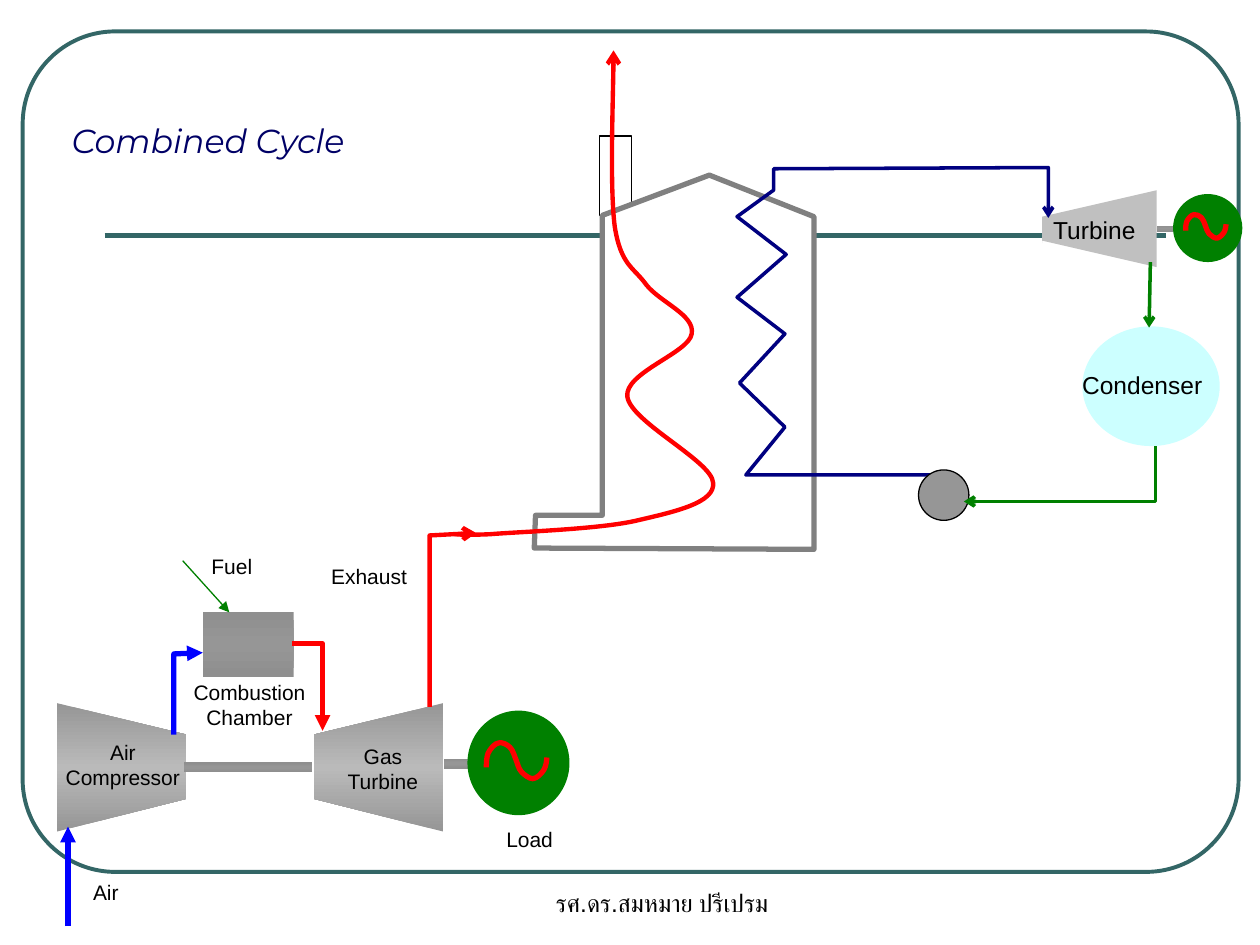
from copy import deepcopy
from pptx import Presentation
from pptx.dml.color import RGBColor
from pptx.enum.shapes import MSO_CONNECTOR as Connector, MSO_SHAPE as Shape
from pptx.enum.text import MSO_ANCHOR as Anchor, PP_ALIGN as Align
from pptx.oxml.ns import qn
from pptx.oxml.xmlchemy import OxmlElement
from pptx.util import Inches, Pt

THEME = {
    "font": "Arial", "title font": "Montserrat",
    "title": 19, "large": 14, "small": 12,
    "text": "000000", "heading": "000066", "white": "FFFFFF", "frame": "336666",
    "wall": "808080", "silver": "C0C0C0", "pump": "969696", "ice": "CCFFFF",
    "green": "008000", "red": "FF0000", "blue": "0000FF", "navy": "000080",
    "metal": ("8F8F8F", "969696"), "casing": ("969696", "BABABA"),
}

# Content, in inches. Boxes are left, top, width, height.
FRAME = (0.18, 0.25, 9.65, 6.67)
RULE = ((0.83, 1.87), (9.25, 1.87))
STACK = (4.76, 1.08, 0.25, 0.63)

# points, fill, line colour, line width
BODIES = [
    ([(4.24, 4.35), (4.25, 4.09), (4.78, 4.09), (4.78, 1.71), (5.63, 1.39),
      (6.46, 1.72), (6.46, 4.36)], "white", "wall", 3),  # boiler
    ([(8.27, 1.93), (8.27, 1.72), (9.18, 1.51), (9.18, 2.12), (8.27, 1.91)],
     "silver", None, 0),  # steam turbine
    ([(0.45, 5.58), (1.48, 5.83), (1.48, 6.34), (0.45, 6.6)],
     "casing", None, 0),  # air compressor
    ([(3.52, 5.58), (2.49, 5.83), (2.49, 6.34), (3.52, 6.6)],
     "casing", None, 0),  # gas turbine
]
METAL_PARTS = [
    (9.18, 1.79, 0.14, 0.05), (1.46, 6.05, 1.02, 0.08),
    (3.52, 6.02, 0.21, 0.08),  # shafts
    (1.61, 4.86, 0.72, 0.51),  # combustion chamber
]
STEAM = [(7.54, 3.77), (5.92, 3.77), (6.23, 3.39), (5.87, 3.04), (6.23, 2.65),
         (5.85, 2.36), (6.24, 2.02), (5.85, 1.72), (6.14, 1.51), (6.14, 1.34),
         (8.32, 1.33), (8.32, 1.73)]
# box, fill, line colour
DISCS = [
    ((7.29, 3.73, 0.4, 0.4), "pump", "text"),
    ((8.59, 2.59, 1.09, 0.95), "ice", None),
    ((9.31, 1.54, 0.55, 0.54), "green", None),
    ((3.71, 5.64, 0.81, 0.83), "green", None),
]
# points, colour, width, arrowhead
PIPES = [
    ([(9.17, 3.54), (9.17, 3.98), (7.65, 3.98)], "green", 2, "arrow"),
    ([(1.38, 5.83), (1.38, 5.19), (1.61, 5.18)], "blue", 3, "triangle"),
    ([(2.32, 5.11), (2.56, 5.11), (2.56, 5.8)], "red", 3, "triangle"),
    ([(3.41, 5.61), (3.41, 4.25), (3.78, 4.23)], "red", 2.5, "arrow"),
]
# start, end, colour, width, arrowhead
ARROWS = [
    ((9.13, 2.08), (9.12, 2.6), "green", 2, "arrow"),
    ((0.54, 7.35), (0.54, 6.56), "blue", 3, "triangle"),
    ((1.45, 4.45), (1.82, 4.86), "green", 0.75, "triangle"),
]
# Bezier points: a start, then two handles and an end for each curve
FLUE_GAS = [
    (3.61, 4.24), (3.65, 4.24), (3.65, 4.25), (3.89, 4.24), (4.13, 4.22),
    (4.77, 4.2), (5.06, 4.13), (5.36, 4.06), (5.68, 3.99), (5.66, 3.83),
    (5.65, 3.66), (5.01, 3.35), (4.98, 3.15), (4.95, 2.96), (5.47, 2.8),
    (5.49, 2.65), (5.52, 2.5), (5.24, 2.4), (5.13, 2.26), (5.03, 2.12),
    (4.93, 2.11), (4.88, 1.8), (4.84, 1.49), (4.87, 0.69), (4.87, 0.4)]
# The generator wave, as shares of its box
WAVE = [
    (0, 0.69), (0, 0.6), (0, 0.42), (0.03, 0.3), (0.07, 0.17), (0.14, 0.03),
    (0.21, 0.02), (0.27, 0), (0.34, 0.06), (0.39, 0.14), (0.44, 0.22),
    (0.46, 0.36), (0.49, 0.48), (0.52, 0.6), (0.53, 0.72), (0.58, 0.81),
    (0.63, 0.9), (0.71, 1), (0.77, 1), (0.84, 0.99), (0.91, 0.86),
    (0.95, 0.76), (0.99, 0.66), (1, 0.48), (1, 0.42)]
WAVE_BOXES = [(9.41, 1.7, 0.32, 0.19), (3.86, 5.89, 0.48, 0.29)]

# text, box, size, alignment, top inset
LABELS = [
    ("รศ.ดร.สมหมาย ปรีเปรม", (3.67, 7, 3.17, 0.5), "large", Align.CENTER, 0.05),
    ("Turbine", (8.26, 1.66, 0.98, 0.28), "large", Align.LEFT, 0.05),
    ("Condenser", (8.49, 2.89, 1.33, 0.56), "large", Align.LEFT, 0.05),
    ("Fuel", (1.58, 4.34, 0.83, 0.35), "small", Align.LEFT, 0.05),
    ("Load", (3.92, 6.51, 0.83, 0.35), "small", Align.LEFT, 0.05),
    ("Exhaust", (2.53, 4.42, 0.83, 0.35), "small", Align.LEFT, 0.05),
    ("Air", (0.64, 6.93, 0.83, 0.35), "small", Align.LEFT, 0.05),
    ("Air Compressor", (0.38, 5.82, 1.19, 0.56), "small", Align.CENTER, 0.05),
    ("Gas Turbine", (2.56, 5.85, 0.96, 0.52), "small", Align.CENTER, 0.05),
    ("Combustion Chamber", (1.42, 5.39, 1.12, 0.56), "small", Align.CENTER, 0),
]
TITLE = ("Combined Cycle", (0.47, 0.54, 3.32, 1.14), "title", Align.LEFT, 0.05)

deck = Presentation()
deck.slide_width, deck.slide_height = Inches(10), Inches(7.5)
page = deck.slides.add_slide(deck.slide_layouts[6])


def color(name):
    return RGBColor.from_string(THEME.get(name, name))


def set_line(item, name, width=0.75, head=None):
    if name is None:
        item.line.fill.background()
        return
    item.line.color.rgb = color(name)
    item.line.width = Pt(width)
    if head:
        tail = OxmlElement("a:tailEnd")
        tail.set("type", head)
        item.line._get_or_add_ln().append(tail)


def set_fill(shape, name):
    shape.shadow.inherit = False
    if name is None:
        shape.fill.background()
    elif isinstance(THEME[name], tuple):  # edge, middle, edge
        shape.fill.gradient()
        shape.fill.gradient_angle = 90
        edge, middle = shape.fill.gradient_stops
        edge.color.rgb, middle.color.rgb = map(color, THEME[name])
        edge.position, middle.position = 0, 0.5
        stops = next(shape._element.iter(qn("a:gsLst")))
        last = deepcopy(stops[0])
        last.set("pos", "100000")
        stops.append(last)
    else:
        shape.fill.solid()
        shape.fill.fore_color.rgb = color(name)


def add_preset(kind, box, fill, line=None, width=0.75):
    shape = page.shapes.add_shape(kind, *map(Inches, box))
    set_fill(shape, fill)
    set_line(shape, line, width)
    return shape


def add_outline(points, fill, line, width, head=None, curved=False):
    first, *rest = [(Inches(x), Inches(y)) for x, y in points]
    builder = page.shapes.build_freeform(*first)
    builder.add_line_segments(rest, close=fill is not None)
    shape = builder.convert_to_shape()
    set_fill(shape, fill)
    set_line(shape, line, width, head)
    if curved:  # every three points become one Bezier segment
        steps = list(shape._element.iter(qn("a:lnTo")))
        for i in range(0, len(steps), 3):
            curve = OxmlElement("a:cubicBezTo")
            steps[i].addprevious(curve)
            for step in steps[i:i + 3]:
                curve.append(step[0])
                step.getparent().remove(step)


def add_line(start, end, name, width, head=None):
    line = page.shapes.add_connector(Connector.STRAIGHT, *map(Inches, start + end))
    set_line(line, name, width, head)
    line._element.spPr.append(OxmlElement("a:effectLst"))


def add_label(text, box, size, align, inset, font="font", ink="text"):
    label = page.shapes.add_textbox(*map(Inches, box))
    frame = label.text_frame
    frame.word_wrap = True
    frame.margin_top = frame.margin_bottom = Inches(inset)
    frame.text = text
    para = frame.paragraphs[0]
    para.alignment = align
    span = para.runs[0].font
    span.name, span.size = THEME[font], Pt(THEME[size])
    span.color.rgb = color(ink)
    return label


# Frame and rule
add_preset(Shape.ROUNDED_RECTANGLE, FRAME, None, "frame", 2.25).adjustments[0] = 0.11
add_line(*RULE, "frame", 3)

# Plant equipment
add_preset(Shape.RECTANGLE, STACK, "white", "text")
for body in BODIES:
    add_outline(*body)
for box in METAL_PARTS:
    add_preset(Shape.RECTANGLE, box, "metal")
add_outline(STEAM, None, "navy", 2, "arrow")
for box, fill, line in DISCS:
    add_preset(Shape.OVAL, box, fill, line)
for left, top, width, height in WAVE_BOXES:
    wave = [(left + x * width, top + y * height) for x, y in WAVE]
    add_outline(wave, None, "red", 3, curved=True)

# Flows
for points, name, width, head in PIPES:
    add_outline(points, None, name, width, head)
for arrow in ARROWS:
    add_line(*arrow)
add_outline(FLUE_GAS, None, "red", 2.5, "arrow", curved=True)

# Text
for label in LABELS:
    add_label(*label)
title = add_label(*TITLE, font="title font", ink="heading")
title.text_frame.vertical_anchor = Anchor.MIDDLE
title.text_frame.paragraphs[0].runs[0].font.italic = True

deck.save("out.pptx")
